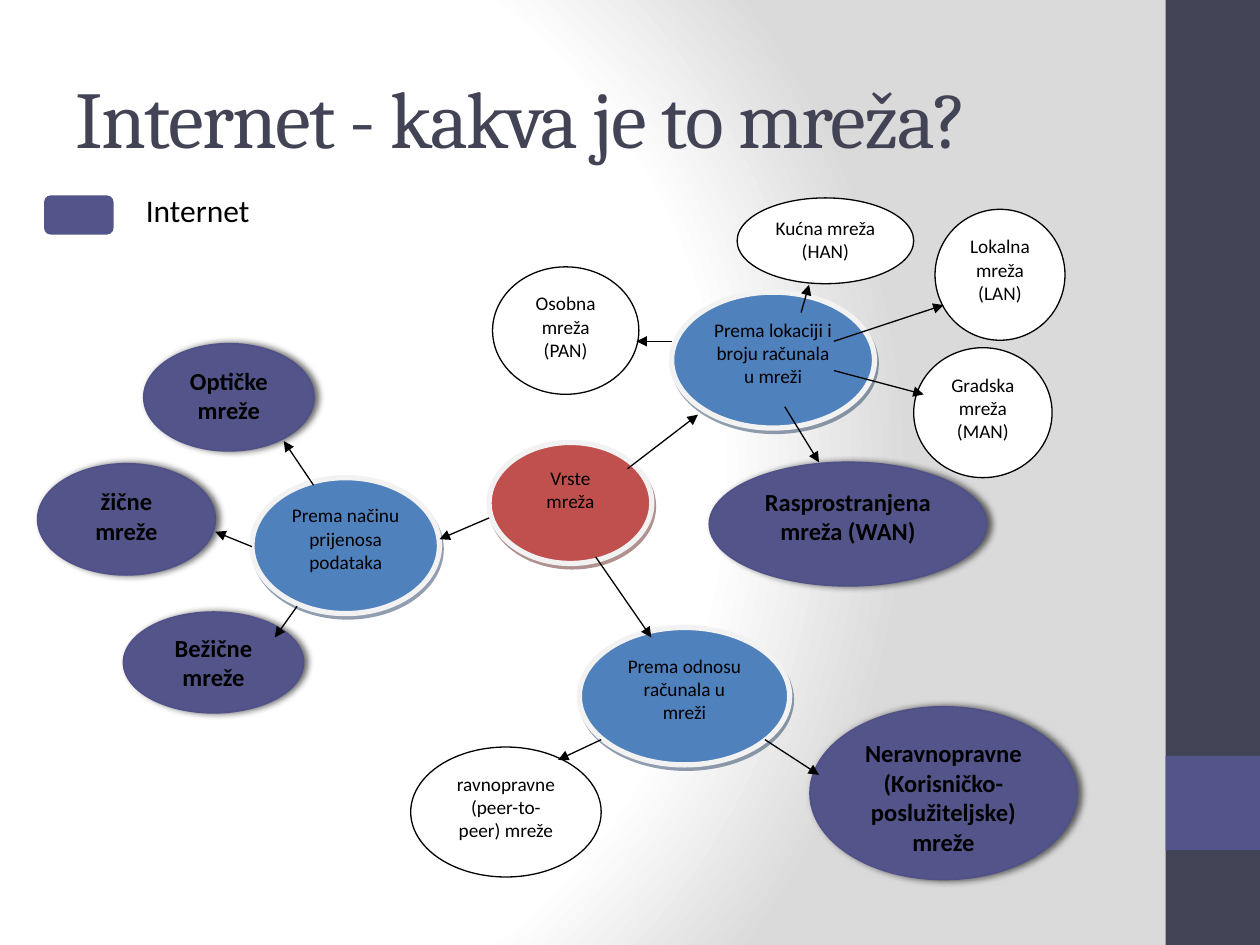
"""Build a slide with a mind map of network types."""
from dataclasses import dataclass
from typing import Any, Optional

from lxml.etree import SubElement
from pptx import Presentation
from pptx.dml.color import RGBColor
from pptx.enum.shapes import MSO_CONNECTOR, MSO_SHAPE as Shape
from pptx.enum.text import MSO_ANCHOR, MSO_AUTO_SIZE as AutoSize, PP_ALIGN as Align
from pptx.oxml.ns import qn
from pptx.util import Cm, Pt

BLACK = RGBColor(0x00, 0x00, 0x00)
WHITE = RGBColor(0xFF, 0xFF, 0xFF)
GREY = RGBColor(0xDA, 0xDA, 0xDA)
PALE = RGBColor(0xF2, 0xF2, 0xF2)
SLATE = RGBColor(0x42, 0x44, 0x56)
VIOLET = RGBColor(0x53, 0x54, 0x8A)
VIOLET_EDGE = RGBColor(0x50, 0x51, 0x88)
BLUE = RGBColor(0x4F, 0x81, 0xBD)
NAVY = RGBColor(0x24, 0x3F, 0x60)
RED = RGBColor(0xC0, 0x50, 0x4D)
MAROON = RGBColor(0x62, 0x24, 0x23)


@dataclass
class Shadow:
    """Describe an outer shadow."""
    color: RGBColor
    opacity: int
    blur: float
    distance: float
    angle: int


@dataclass
class NodeStyle:
    """Describe the look of one kind of node."""
    fill: RGBColor
    line: RGBColor
    width: float
    shadow: Optional[Shadow] = None
    size: int = 11
    bold: bool = False


ROOT = NodeStyle(RED, PALE, 3, Shadow(MAROON, 50, 0, 2.2, 63))
BRANCH = NodeStyle(BLUE, PALE, 3, Shadow(NAVY, 50, 0, 2.2, 63))
INTERNET = NodeStyle(VIOLET, VIOLET_EDGE, 1, Shadow(BLACK, 60, 4, 2, 0), 14, True)
LEAF = NodeStyle(WHITE, BLACK, 0.75)

NODES = [
    ("Prema načinu prijenosa podataka", BRANCH, 5.08, 9.63, 3.78, 2.74),
    ("žične mreže", INTERNET, 0.76, 9.35, 3.58, 2.24),
    ("Optičke mreže", INTERNET, 2.9, 6.93, 3.43, 2.16),
    ("Bežične mreže", INTERNET, 2.49, 12.34, 3.63, 2.03),
    ("Prema odnosu računala u mreži", BRANCH, 11.68, 12.65, 4.24, 2.77),
    ("Neravnopravne (Korisničko-poslužiteljske) mreže", INTERNET,
     16.33, 14.25, 5.38, 3.48),
    ("ravnopravne (peer-to-peer) mreže", LEAF, 8.28, 15.06, 3.84, 2.62),
    ("Prema lokaciji i broju računala u mreži", BRANCH, 13.54, 5.89, 4.09, 2.74),
    ("Kućna mreža (HAN)", LEAF, 14.86, 3.99, 3.56, 1.73),
    ("Lokalna mreža (LAN)", LEAF, 18.85, 4.22, 2.62, 2.64),
    ("Osobna mreža (PAN)", LEAF, 9.93, 5.38, 2.95, 2.57),
    ("Gradska mreža (MAN)", LEAF, 18.42, 7.01, 2.79, 2.62),
    ("Rasprostranjena mreža (WAN)", INTERNET, 14.3, 9.32, 5.59, 2.49),
    ("Vrste mreža", ROOT, 9.86, 8.92, 3.28, 2.44),
]

ARROWS = [
    (6.32, 9.78, 5.72, 8.89),
    (5.08, 11.02, 4.34, 10.72),
    (5.99, 12.22, 5.54, 12.85),
    (12.12, 14.91, 11.25, 15.32),
    (15.42, 14.91, 16.51, 15.62),
    (13.54, 6.88, 12.83, 6.88),
    (16.15, 6.3, 16.31, 5.74),
    (16.81, 6.88, 19.02, 6.15),
    (16.81, 7.47, 18.62, 7.95),
    (15.82, 8.2, 16.51, 9.32),
    (9.86, 10.44, 8.86, 10.87),
    (12.65, 9.45, 14.07, 8.36),
    (12.01, 11.23, 13.13, 12.85),
]


@dataclass
class MapPage:
    """Hold the text style and the slide being drawn."""
    page: Any
    body_font: str = "Calibri"
    title_font: str = "Cambria"

    def background(self):
        """Spread a white to grey radial gradient."""
        self.page.background.fill.gradient()
        gradient = self.page.element.find(".//" + qn("a:gradFill"))
        gradient.clear()
        stops = SubElement(gradient, qn("a:gsLst"))
        for percent, color in ((0, WHITE), (75, WHITE), (100, GREY)):
            stop = SubElement(stops, qn("a:gs"), pos=str(percent * 1000))
            SubElement(stop, qn("a:srgbClr"), val=str(color))
        circle = SubElement(gradient, qn("a:path"), {"path": "circle"})
        SubElement(circle, qn("a:fillToRect"), l="20000", t="50000", r="100000", b="50000")

    def block(self, kind, color, *place):
        """Add a plain filled shape."""
        shape = self.page.shapes.add_shape(kind, *map(Cm, place))
        shape.shadow.inherit = False
        shape.fill.solid()
        shape.fill.fore_color.rgb = color
        shape.line.fill.background()
        return shape

    def fill_text(self, frame, text, size, color=BLACK, font=None, bold=False,
                  align=Align.LEFT):
        """Fill a frame with one formatted paragraph."""
        frame.word_wrap = True
        frame.text = text
        para = frame.paragraphs[0]
        para.alignment = align
        para.font.name = font or self.body_font
        para.font.size = Pt(size)
        para.font.bold = bold
        para.font.color.rgb = color
        return para

    def title(self, text, *place):
        """Move and fill the title placeholder."""
        box = self.page.shapes.title
        box.left, box.top, box.width, box.height = map(Cm, place)
        frame = box.text_frame
        frame.auto_size = AutoSize.NONE
        frame.vertical_anchor = MSO_ANCHOR.MIDDLE
        para = self.fill_text(frame, text, 46, SLATE, self.title_font)
        para.runs[0].font.bold = False
        box.element.find(".//" + qn("a:rPr")).set("spc", "-100")

    def node(self, text, style, *place):
        """Add an ellipse with centred text."""
        oval = self.block(Shape.OVAL, style.fill, *place)
        oval.line.color.rgb = style.line
        oval.line.width = Pt(style.width)
        if style.shadow:
            self.cast(oval, style.shadow)
        oval.text_frame.vertical_anchor = MSO_ANCHOR.TOP
        para = self.fill_text(oval.text_frame, text, style.size, bold=style.bold,
                              align=Align.CENTER)
        para.space_after = Pt(10)

    def cast(self, shape, shadow):
        """Give a shape an outer shadow."""
        effects = shape.element.spPr.find(qn("a:effectLst"))
        outer = SubElement(effects, qn("a:outerShdw"), blurRad=str(Pt(shadow.blur)),
                           dist=str(Pt(shadow.distance)), dir=str(shadow.angle * 60000),
                           algn="ctr", rotWithShape="0")
        color = SubElement(outer, qn("a:srgbClr"), val=str(shadow.color))
        SubElement(color, qn("a:alpha"), val=str(shadow.opacity * 1000))

    def arrow(self, *ends):
        """Add a thin arrow between two points."""
        link = self.page.shapes.add_connector(MSO_CONNECTOR.STRAIGHT, *map(Cm, ends))
        link.line.color.rgb = BLACK
        link.line.width = Pt(0.75)
        properties = link.element.spPr
        SubElement(properties.find(qn("a:ln")), qn("a:tailEnd"), type="triangle")
        SubElement(properties, qn("a:effectLst"))

    def label(self, text, *place):
        """Add a text box."""
        frame = self.page.shapes.add_textbox(*map(Cm, place)).text_frame
        frame.auto_size = AutoSize.SHAPE_TO_FIT_TEXT
        self.fill_text(frame, text, 18)


def main():
    """Draw the slide and save it."""
    deck = Presentation()
    deck.slide_width, deck.slide_height = Cm(25.4), Cm(19.05)
    page = MapPage(deck.slides.add_slide(deck.slide_layouts[5]))
    page.background()
    page.block(Shape.RECTANGLE, SLATE, 23.5, 0, 1.9, 19.05)
    page.block(Shape.RECTANGLE, VIOLET, 23.5, 15.24, 1.9, 1.9)
    page.title("Internet - kakva je to mreža?", 1.27, 0.76, 21.16, 3.18)
    for node in NODES:
        page.node(*node)
    for ends in ARROWS:
        page.arrow(*ends)
    page.block(Shape.ROUNDED_RECTANGLE, VIOLET, 0.89, 3.94, 1.4, 0.79)
    page.label("Internet", 2.69, 3.73, 3, 1.02)
    deck.save("out.pptx")


if __name__ == "__main__":
    main()
